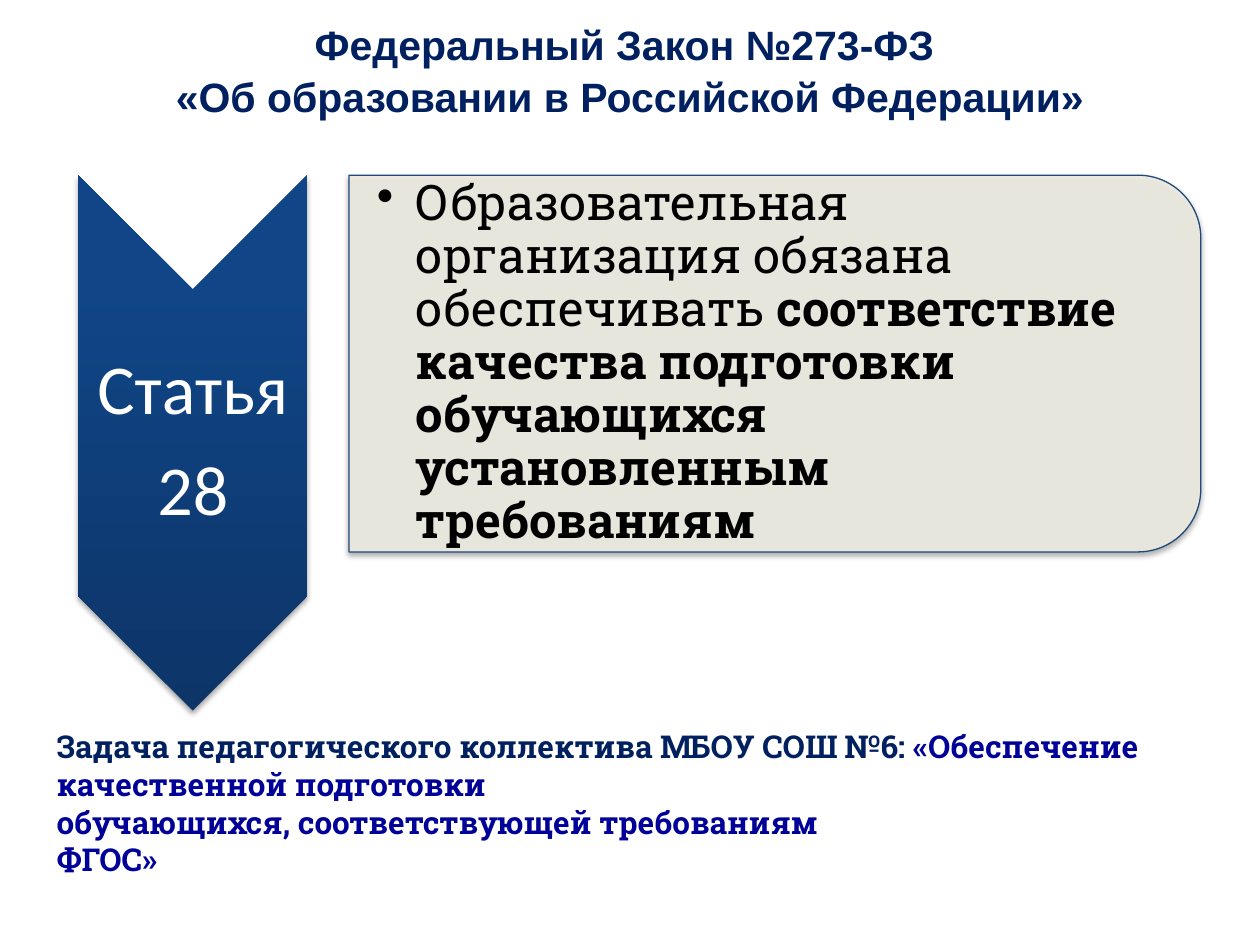
from lxml import etree
from pptx import Presentation
from pptx.dml.color import RGBColor
from pptx.enum.shapes import MSO_SHAPE
from pptx.enum.text import MSO_ANCHOR, PP_ALIGN
from pptx.oxml import parse_xml
from pptx.oxml.ns import qn
from pptx.util import Inches, Pt

CHEVRON = MSO_SHAPE.CHEVRON
ROUND = MSO_SHAPE.ROUND_2_SAME_RECTANGLE
TOP, MIDDLE = MSO_ANCHOR.TOP, MSO_ANCHOR.MIDDLE
CENTER = PP_ALIGN.CENTER
NS = 'xmlns:a="http://schemas.openxmlformats.org/drawingml/2006/main"'
NAVY, BLUE, WHITE, BLACK = "002060", "000099", "FFFFFF", "000000"
SLAB = "Roboto Slab"


def color(code):
    return RGBColor.from_string(code)


def add_shadow(shape):
    shape.shadow.inherit = False
    effects = shape._element.spPr.find(qn("a:effectLst"))
    effects.append(parse_xml(
        f'<a:outerShdw {NS} blurRad="{Pt(3.1)}" dist="{Pt(1.8)}" dir="5400000" '
        'rotWithShape="0"><a:srgbClr val="000000"><a:alpha val="35000"/>'
        '</a:srgbClr></a:outerShdw>'))


def add_turned(slide, kind, left, top, width, height):
    x, y = left + (width - height) / 2, top + (height - width) / 2
    shape = slide.shapes.add_shape(
        kind, Inches(x), Inches(y), Inches(height), Inches(width))
    shape.rotation = 90
    add_shadow(shape)
    return shape


def add_arrow(slide):
    arrow = add_turned(slide, CHEVRON, 0.62, 1.39, 1.82, 4.25)
    arrow.line.fill.background()
    arrow.fill.gradient()
    grad = arrow._element.spPr.find(qn("a:gradFill"))
    stops = ((0, "0D3568"), (80, "104587"), (100, "0E458A"))
    marks = "".join(
        f'<a:gs pos="{pos * 1000}"><a:srgbClr val="{code}"/></a:gs>'
        for pos, code in stops)
    grad.getparent().replace(grad, parse_xml(
        f'<a:gradFill {NS} rotWithShape="0"><a:gsLst>{marks}</a:gsLst>'
        '<a:lin ang="16200000" scaled="0"/></a:gradFill>'))


def add_panel(slide):
    panel = add_turned(slide, ROUND, 2.77, 1.39, 6.76, 2.99)
    panel.fill.solid()
    panel.fill.fore_color.rgb = color("EEECE1")
    tint = panel._element.spPr.find(qn("a:solidFill"))[0]
    etree.SubElement(tint, qn("a:alpha")).set("val", "90000")
    panel.line.color.rgb = color("1F497D")
    panel.line.width = Pt(0.75)


def add_box(slide, left, top, width, height, anchor=TOP, insets=None):
    box = slide.shapes.add_textbox(
        Inches(left), Inches(top), Inches(width), Inches(height))
    frame = box.text_frame
    frame.word_wrap = True
    frame.vertical_anchor = anchor
    if insets:
        (frame.margin_left, frame.margin_top,
         frame.margin_right, frame.margin_bottom) = map(Inches, insets)
    return frame


def set_font(para, name, size, code=None, bold=None):
    para.font.name = name
    para.font.size = Pt(size)
    para.font.bold = bold
    if code:
        para.font.color.rgb = color(code)


def add_runs(para, text):
    runs = []
    for i, line in enumerate(text.split("\n")):
        if i:
            para.add_line_break()
        run = para.add_run()
        run.text = line
        runs.append(run)
    return runs


def add_title(slide):
    frame = add_box(slide, 0, 0.13, 10, 1.17, insets=(0.1, 0, 0.1, 0))
    para = frame.paragraphs[0]
    para.alignment = CENTER
    para.line_spacing = 1.06
    set_font(para, "Arial", 23.4, NAVY, True)
    add_runs(para, "Федеральный Закон №273-ФЗ \n«Об образовании в Российской Федерации»")


def add_label(slide):
    frame = add_box(slide, 0.62, 2.3, 1.82, 2.42, MIDDLE, (0.03,) * 4)
    frame.text = "Статья\n28"
    for para in frame.paragraphs:
        para.alignment = CENTER
        para.line_spacing = 0.9
        para.space_after = Pt(14)
        set_font(para, "Calibri", 40, WHITE)


def add_duty(slide):
    frame = add_box(slide, 2.77, 1.54, 6.62, 2.69, MIDDLE, (0.22, 0.02, 0.02, 0.02))
    para = frame.paragraphs[0]
    para.line_spacing = 0.9
    para.space_after = Pt(4.2)
    set_font(para, SLAB, 28, BLACK)
    props = para._p.get_or_add_pPr()
    props.set("marL", str(Inches(0.31)))
    props.set("indent", str(Inches(-0.31)))
    bullet = parse_xml(f'<a:buChar {NS} char="•"/>')
    props.find(qn("a:defRPr")).addprevious(bullet)
    add_runs(para, "Образовательная организация обязана обеспечивать ")
    for run in add_runs(para, "соответствие качества подготовки обучающихся "
                              "установленным требованиям"):
        run.font.bold = True


def add_task(slide):
    para = add_box(slide, 0.35, 5.72, 9.21, 1.31).paragraphs[0]
    set_font(para, SLAB, 18, bold=True)
    parts = (
        ("Задача педагогического коллектива МБОУ СОШ №6: ", NAVY),
        ("«Обеспечение качественной подготовки \n"
         "обучающихся, соответствующей требованиям \nФГОС»", BLUE))
    for text, code in parts:
        for run in add_runs(para, text):
            run.font.color.rgb = color(code)


def main():
    deck = Presentation()
    deck.slide_width, deck.slide_height = Inches(10), Inches(7.5)
    slide = deck.slides.add_slide(deck.slide_layouts[6])
    add_title(slide)
    add_arrow(slide)
    add_label(slide)
    add_panel(slide)
    add_duty(slide)
    add_task(slide)
    deck.save("out.pptx")


if __name__ == "__main__":
    main()
